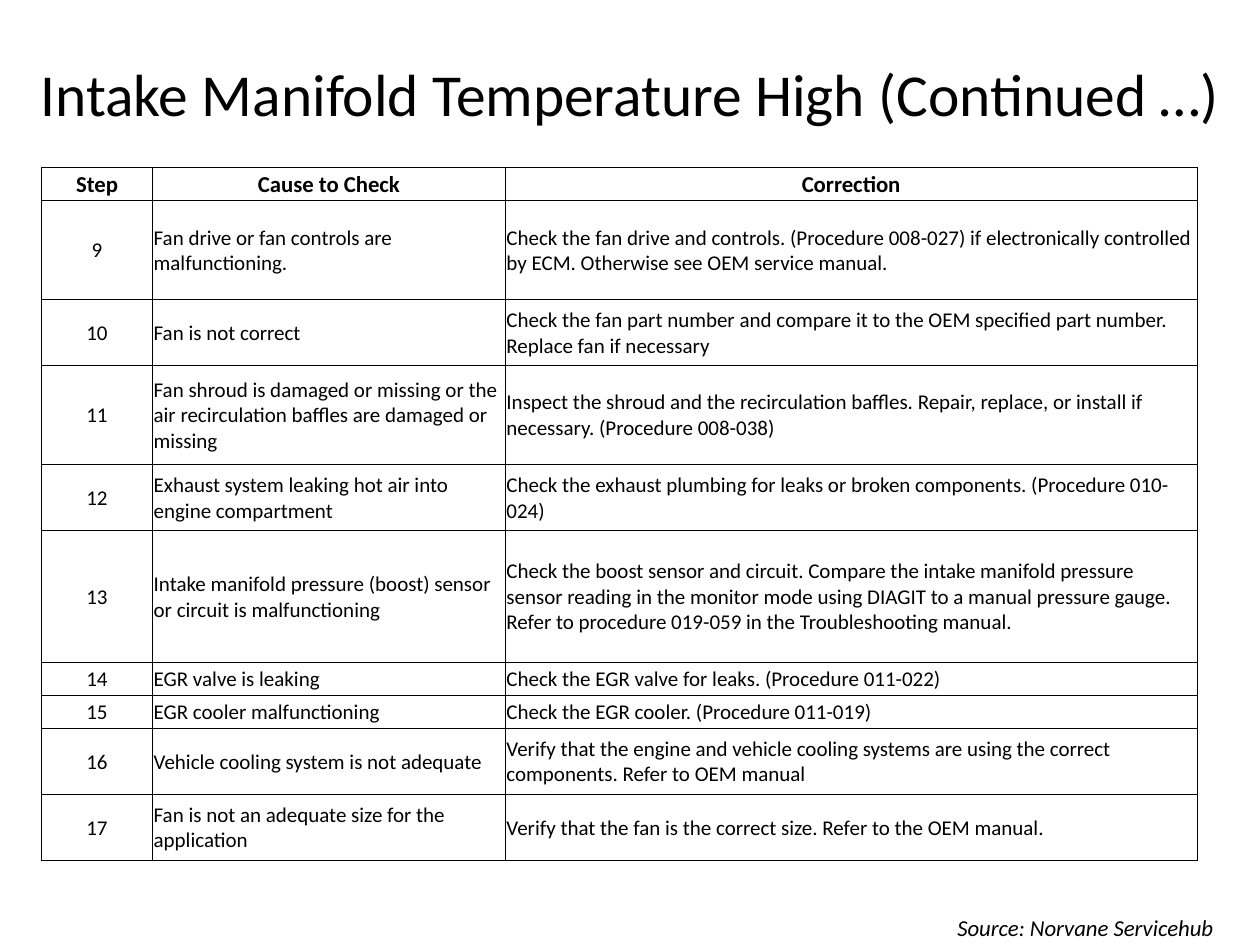
from lxml.etree import SubElement
from pptx import Presentation
from pptx.dml.color import RGBColor
from pptx.enum.text import MSO_ANCHOR as Anchor, MSO_AUTO_SIZE as AutoSize, PP_ALIGN as Align
from pptx.oxml.ns import qn
from pptx.util import Inches, Pt


def write(frame, text, size=12, color="000000", bold=False, italic=False, align=Align.LEFT):
    para = frame.paragraphs[0]
    para.alignment = align
    span = para.add_run()
    span.text = text
    font = span.font
    font.name, font.size, font.bold, font.italic = "Calibri", Pt(size), bold, italic
    font.color.rgb = RGBColor.from_string(color)


def draw_borders(cell, color="000000", width=0.5):
    properties = cell._tc.get_or_add_tcPr()
    for side in ("a:lnL", "a:lnR", "a:lnT", "a:lnB"):
        line = SubElement(properties, qn(side), w=str(Pt(width)))
        fill = SubElement(line, qn("a:solidFill"))
        SubElement(fill, qn("a:srgbClr"), val=color)


deck = Presentation()
deck.slide_width, deck.slide_height = Inches(10), Inches(7.5)
slide = deck.slides.add_slide(deck.slide_layouts[5])

title = slide.shapes.title
title.left, title.top, title.width, title.height = Inches(0), Inches(0.3), Inches(10), Inches(0.87)
title.text_frame.auto_size = AutoSize.NONE
title.text_frame.vertical_anchor = Anchor.MIDDLE
write(title.text_frame, "Intake Manifold Temperature High (Continued …)", size=34, align=Align.CENTER)

headings = ("Step", "Cause to Check", "Correction")
first_step = 9
checks = [
    (3, "Fan drive or fan controls are malfunctioning.",
     "Check the fan drive and controls. (Procedure 008-027) if electronically controlled by ECM. "
     "Otherwise see OEM service manual."),
    (2, "Fan is not correct",
     "Check the fan part number and compare it to the OEM specified part number. "
     "Replace fan if necessary"),
    (3, "Fan shroud is damaged or missing or the air recirculation baffles are damaged or missing",
     "Inspect the shroud and the recirculation baffles. Repair, replace, or install if necessary. "
     "(Procedure 008-038)"),
    (2, "Exhaust system leaking hot air into engine compartment",
     "Check the exhaust plumbing for leaks or broken components. (Procedure 010-024)"),
    (4, "Intake manifold pressure (boost) sensor or circuit is malfunctioning",
     "Check the boost sensor and circuit. Compare the intake manifold pressure sensor reading "
     "in the monitor mode using DIAGIT to a manual pressure gauge. "
     "Refer to procedure 019-059 in the Troubleshooting manual."),
    (1, "EGR valve is leaking", "Check the EGR valve for leaks. (Procedure 011-022)"),
    (1, "EGR cooler malfunctioning", "Check the EGR cooler. (Procedure 011-019)"),
    (2, "Vehicle cooling system is not adequate",
     "Verify that the engine and vehicle cooling systems are using the correct components. "
     "Refer to OEM manual"),
    (2, "Fan is not an adequate size for the application",
     "Verify that the fan is the correct size. Refer to the OEM manual."),
]
rows = [(1, headings)]
for step, (units, cause, correction) in enumerate(checks, first_step):
    rows.append((units, (str(step), cause, correction)))

table_height = Inches(5.5)
unit_height = table_height / sum(units for units, texts in rows)
table = slide.shapes.add_table(
    len(rows), len(headings), Inches(0.33), Inches(1.33), Inches(9.17), table_height).table
table.first_row = table.horz_banding = False
for column, width in zip(table.columns, (0.88, 2.8, 5.49)):
    column.width = Inches(width)

for row_index, (units, texts) in enumerate(rows):
    table.rows[row_index].height = round(units * unit_height)
    is_heading = row_index == 0
    for column_index, text in enumerate(texts):
        cell = table.cell(row_index, column_index)
        cell.margin_left = cell.margin_right = cell.margin_top = Inches(0.01)
        cell.margin_bottom = Inches(0)
        cell.vertical_anchor = Anchor.MIDDLE
        draw_borders(cell)
        cell.fill.background()
        centred = is_heading or column_index == 0
        write(cell.text_frame, text, size=13 if is_heading else 12, bold=is_heading,
              align=Align.CENTER if centred else Align.LEFT)

source = slide.shapes.add_textbox(Inches(7.5), Inches(7.2), Inches(2.5), Inches(0.32))
source.text_frame.word_wrap = True
source.text_frame.auto_size = AutoSize.SHAPE_TO_FIT_TEXT
write(source.text_frame, "Source: Norvane Servicehub", size=13, italic=True)

deck.save("out.pptx")
